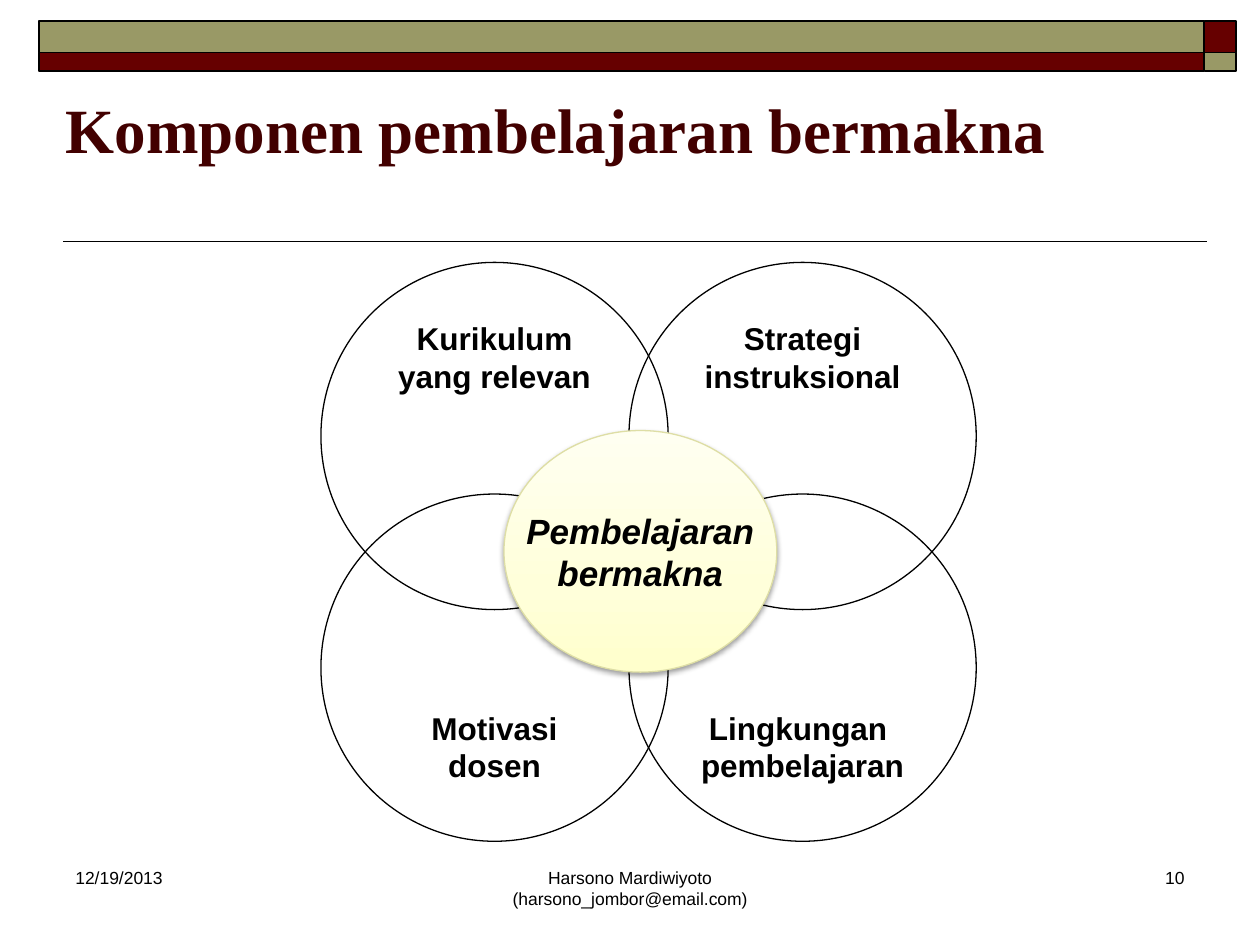
from copy import deepcopy

from lxml import etree
from pptx import Presentation
from pptx.dml.color import RGBColor
from pptx.enum.shapes import MSO_CONNECTOR, MSO_SHAPE
from pptx.enum.text import MSO_ANCHOR as ANCHOR, PP_ALIGN as ALIGN
from pptx.oxml import parse_xml
from pptx.oxml.ns import nsdecls, qn
from pptx.util import Cm, Pt

COLORS = {
    "black": "000000",
    "maroon": "660000",
    "olive": "999966",
    "title": "420000",
    "center_line": "DEDEA5",
}
CENTER_STOPS = [(0, "FFFFCC"), (0.35, "FFFFDA"), (1, "FFFFF1")]


def rgb(name):
    return RGBColor.from_string(COLORS[name])


def write(tf, text, size, align, color="black", font="Arial", bold=False, italic=False):
    tf.text = text
    for p in tf.paragraphs:
        p.alignment = align
        for r in p.runs:
            r.font.name, r.font.size = font, Pt(size)
            r.font.bold, r.font.italic = bold, italic
            r.font.color.rgb = rgb(color)


def add_bar(slide, left, top, width, height, color):
    sp = slide.shapes.add_shape(MSO_SHAPE.RECTANGLE, Cm(left), Cm(top), Cm(width), Cm(height))
    sp.fill.solid()
    sp.fill.fore_color.rgb = rgb(color)
    sp.line.color.rgb = rgb("black")
    sp.line.width = Pt(1)
    sp.shadow.inherit = False


def add_rule(slide, left, right, y):
    line = slide.shapes.add_connector(MSO_CONNECTOR.STRAIGHT, Cm(left), Cm(y), Cm(right), Cm(y))
    line.line.color.rgb = rgb("black")
    line.line.width = Pt(1)
    etree.SubElement(line._element.spPr, qn("a:effectLst"))


def add_ellipse(slide, left, top, width, height, text, size, anchor,
                line="black", italic=False):
    sp = slide.shapes.add_shape(MSO_SHAPE.OVAL, Cm(left), Cm(top), Cm(width), Cm(height))
    sp.fill.background()
    sp.line.color.rgb = rgb(line)
    sp.line.width = Pt(0.75)
    sp.shadow.inherit = False
    tf = sp.text_frame
    tf.word_wrap = False
    tf.vertical_anchor = anchor
    write(tf, text, size, ALIGN.CENTER, bold=True, italic=italic)
    return sp


def add_glow(sp):
    """Give the shape a vertical gradient and a soft shadow below."""
    sp.fill.gradient()
    sp.fill.gradient_angle = 90
    stop_list = sp._element.spPr.find(".//" + qn("a:gsLst"))
    stop_list.insert(1, deepcopy(stop_list[0]))
    for stop, (position, color) in zip(sp.fill.gradient_stops, CENTER_STOPS):
        stop.position = position
        stop.color.rgb = RGBColor.from_string(color)
    sp._element.spPr.find(qn("a:effectLst")).append(parse_xml(
        f'<a:outerShdw {nsdecls("a")} blurRad="40000" dist="20000" dir="5400000" rotWithShape="0">'
        f'<a:srgbClr val="{COLORS["black"]}"><a:alpha val="38000"/></a:srgbClr></a:outerShdw>'))


def add_footer(slide, left, width, text, align):
    tf = slide.shapes.add_textbox(Cm(left), Cm(17.35), Cm(width), Cm(1.27)).text_frame
    tf.word_wrap = True
    write(tf, text, 10, align)


def add_title(slide, text):
    title = slide.shapes.title
    title.left, title.top, title.width, title.height = Cm(1.07), Cm(0.64), Cm(23.5), Cm(2.84)
    title.text_frame.vertical_anchor = ANCHOR.BOTTOM
    write(title.text_frame, text, 36, ALIGN.LEFT, "title", "Times New Roman", bold=True)


def main():
    prs = Presentation()
    prs.slide_width, prs.slide_height = Cm(25.4), Cm(19.05)
    slide = prs.slides.add_slide(prs.slide_layouts[5])

    # Header band: two rows with swapped colours at the right end
    for top, height, color, end in [(0.42, 0.64, "olive", "maroon"),
                                    (1.06, 0.38, "maroon", "olive")]:
        add_bar(slide, 0.78, top, 23.5, height, color)
        add_bar(slide, 24.28, top, 0.64, height, end)
    add_title(slide, "Komponen pembelajaran bermakna")
    add_rule(slide, 1.27, 24.33, 4.87)

    # Four overlapping circles in a 2 x 2 grid
    rows = [(5.29, ANCHOR.TOP, ["Kurikulum\nyang relevan", "Strategi\ninstruksional"]),
            (9.96, ANCHOR.BOTTOM, ["Motivasi\ndosen", "Lingkungan \npembelajaran"])]
    for top, anchor, labels in rows:
        for left, label in zip((6.47, 12.68), labels):
            add_ellipse(slide, left, top, 7, 7, label, 18, anchor)

    # Centre
    center = add_ellipse(slide, 10.16, 8.68, 5.5, 4.87, "Pembelajaran\nbermakna", 20,
                         ANCHOR.MIDDLE, "center_line", italic=True)
    add_glow(center)

    # Footer
    add_footer(slide, 1.27, 4.66, "12/19/2013", ALIGN.LEFT)
    add_footer(slide, 8.68, 8.04, "Harsono Mardiwiyoto (harsono_jombor@email.com)", ALIGN.CENTER)
    add_footer(slide, 18.84, 5.29, "10", ALIGN.RIGHT)

    prs.save("out.pptx")


if __name__ == "__main__":
    main()
